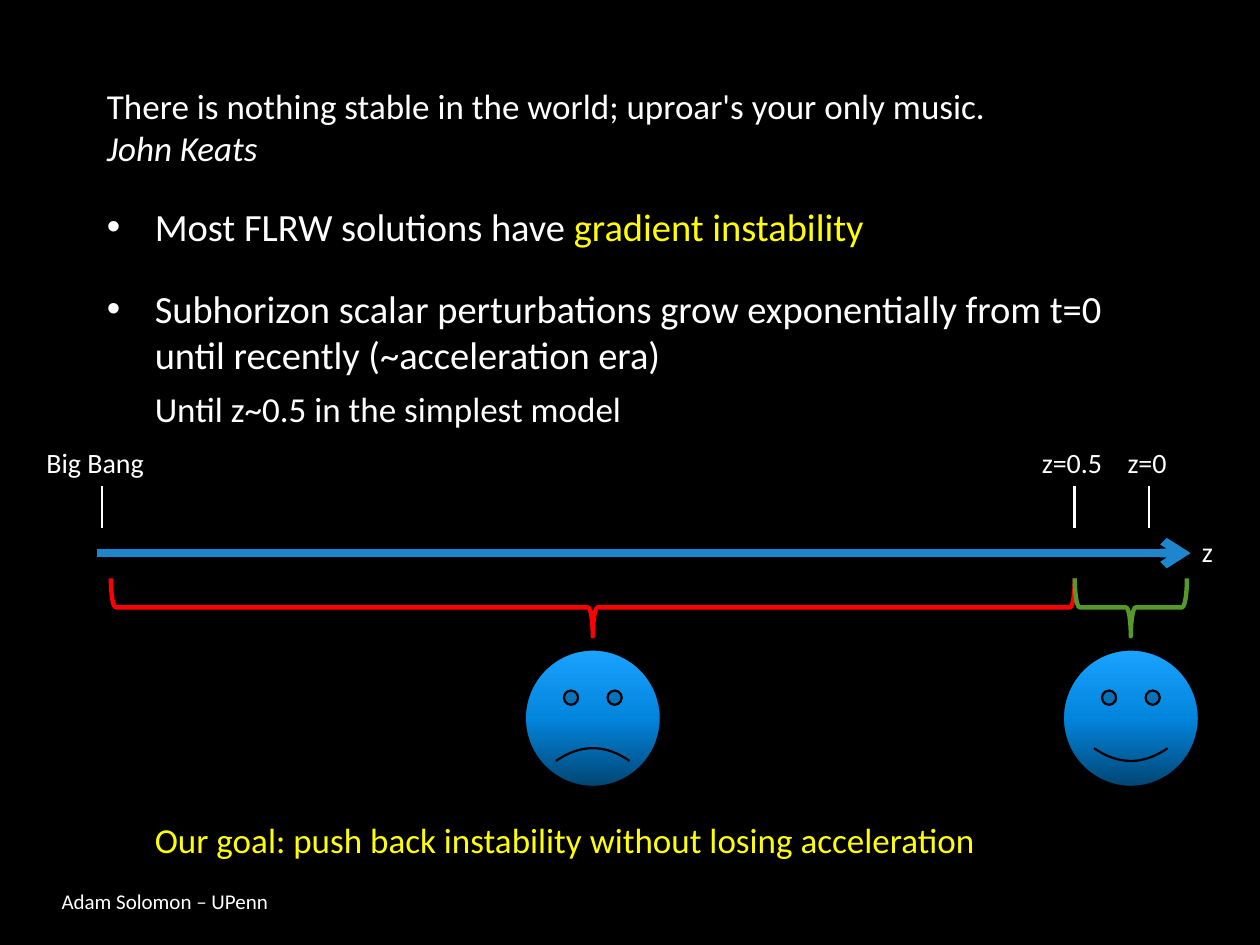
from copy import deepcopy
from dataclasses import dataclass

from lxml import etree
from pptx import Presentation
from pptx import util as u
from pptx.dml.color import RGBColor
from pptx.enum import shapes, text
from pptx.oxml import ns

BLACK = RGBColor(0, 0, 0)
WHITE = RGBColor(0xFF, 0xFF, 0xFF)
YELLOW = RGBColor(0xFF, 0xFF, 0)
RED = RGBColor(0xFF, 0, 0)
GREEN = RGBColor(0x55, 0x99, 0x2B)
BLUE = RGBColor(0x1D, 0x86, 0xCD)
FACE_STOPS = (
    (0, RGBColor(0x01, 0x45, 0x73)),
    (0.5, RGBColor(0x02, 0x85, 0xDD)),
    (1, RGBColor(0x1A, 0xA3, 0xFF)),
)
TICK_TOP, TICK_BOTTOM, AXIS_Y = 3.86, 4.19, 4.39


@dataclass(frozen=True)
class Span:
    words: str
    size: float = 20
    color: RGBColor = WHITE
    italic: bool = False
    breaks_line: bool = False


@dataclass(frozen=True)
class Para:
    spans: tuple[Span, ...]
    before: float = 0
    margin: float = 0
    bullet: bool = False


@dataclass(frozen=True)
class Label:
    words: str
    left: float
    top: float
    width: float


@dataclass(frozen=True)
class Era:
    start: float
    end: float
    color: RGBColor
    smile: float


QUOTE_AND_POINTS = (
    Para((
        Span("There is nothing stable in the world; uproar's your only music."),
        Span("John Keats", italic=True, breaks_line=True),
    )),
    Para((
        Span("Most FLRW solutions have ", 22),
        Span("gradient instability", 22, YELLOW),
    ), 20, 0.38, True),
    Para((
        Span("Subhorizon scalar perturbations grow exponentially "
             "from t=0 until recently (~acceleration era)", 22),
    ), 20, 0.38, True),
    Para((Span("Until z~0.5 in the simplest model"),), 6, 0.38),
)
GOAL = Para((
    Span("Our goal: push back instability without losing acceleration", color=YELLOW),
), margin=0.38)
FOOTER = Para((Span("Adam Solomon – UPenn", 12),))
LABELS = (
    Label("Big Bang", 0.27, 3.49, 1.33),
    Label("z=0.5", 8.17, 3.49, 0.86),
    Label("z=0", 8.85, 3.49, 0.59),
    Label("z", 9.44, 4.19, 0.42),
)
TICKS = (0.81, 8.53, 9.12)
ERAS = (
    Era(0.88, 8.53, RED, -0.047),
    Era(8.53, 9.42, GREEN, 0.047),
)


def add_text(page, left: float, top: float, width: float, height: float,
             paras: tuple[Para, ...], anchor=text.MSO_ANCHOR.TOP) -> None:
    box = page.shapes.add_textbox(*map(u.Inches, (left, top, width, height)))
    frame = box.text_frame
    frame.word_wrap = True
    frame.vertical_anchor = anchor
    for index, item in enumerate(paras):
        para = frame.add_paragraph() if index else frame.paragraphs[0]
        properties = para._p.get_or_add_pPr()
        properties.set("marL", str(u.Inches(item.margin)))
        if item.bullet:
            properties.set("indent", str(-u.Inches(item.margin)))
            font = etree.SubElement(properties, ns.qn("a:buFont"))
            font.set("typeface", "Arial")
            etree.SubElement(properties, ns.qn("a:buChar")).set("char", "•")
        para.space_before = u.Pt(item.before)
        for span in item.spans:
            if span.breaks_line:
                para.add_line_break()
            run = para.add_run()
            run.text = span.words
            formats = {"name": "Calibri", "size": u.Pt(span.size), "italic": span.italic}
            for name, value in formats.items():
                setattr(run.font, name, value)
            run.font.color.rgb = span.color


def add_line(page, start: tuple[float, float], end: tuple[float, float],
             color: RGBColor, weight: float, arrow: bool = False) -> None:
    line = page.shapes.add_connector(
        shapes.MSO_CONNECTOR.STRAIGHT, *map(u.Inches, (*start, *end)))
    line.line.color.rgb = color
    line.line.width = u.Pt(weight)
    if arrow:
        outline = line.line._get_or_add_ln()
        etree.SubElement(outline, ns.qn("a:tailEnd")).set("type", "arrow")
    etree.SubElement(line._element.spPr, ns.qn("a:effectLst"))


def add_outlined(page, kind, center_x: float, center_y: float, width: float,
                 height: float, color: RGBColor, weight: float):
    left, top = center_x - width / 2, center_y - height / 2
    shape = page.shapes.add_shape(kind, *map(u.Inches, (left, top, width, height)))
    shape.shadow.inherit = False
    shape.line.color.rgb = color
    shape.line.width = u.Pt(weight)
    return shape


def add_era(page, era: Era) -> None:
    middle = (era.start + era.end) / 2
    brace = add_outlined(page, shapes.MSO_SHAPE.LEFT_BRACE, middle, 4.82,
                         0.46, era.end - era.start, era.color, 2.5)
    brace.rotation = 270
    brace.fill.background()

    face = add_outlined(page, shapes.MSO_SHAPE.SMILEY_FACE, middle, 5.7,
                        1.08, 1.09, BLACK, 1.25)
    face.adjustments[0] = era.smile
    face.fill.gradient()
    face.fill.gradient_angle = 90
    stop_list = face._element.spPr.find(ns.qn("a:gradFill")).find(ns.qn("a:gsLst"))
    stop_list.append(deepcopy(stop_list[0]))
    for stop, (position, color) in zip(face.fill.gradient_stops, FACE_STOPS):
        stop.position = position
        stop.color.rgb = color


def main() -> None:
    deck = Presentation()
    deck.slide_width, deck.slide_height = u.Inches(10), u.Inches(7.5)
    page = deck.slides.add_slide(deck.slide_layouts[6])
    page.background.fill.solid()
    page.background.fill.fore_color.rgb = BLACK

    add_text(page, 0.75, 0.62, 8.68, 2.85, QUOTE_AND_POINTS)
    add_text(page, 0.75, 6.45, 8.68, 0.44, (GOAL,))
    add_text(page, 0.39, 6.95, 3.17, 0.4, (FOOTER,), text.MSO_ANCHOR.MIDDLE)

    add_line(page, (0.77, AXIS_Y), (9.45, AXIS_Y), BLUE, 5, arrow=True)
    for era in ERAS:
        add_era(page, era)
    for x in TICKS:
        add_line(page, (x, TICK_TOP), (x, TICK_BOTTOM), WHITE, 1.5)
    for label in LABELS:
        add_text(page, label.left, label.top, label.width, 0.37,
                 (Para((Span(label.words, 16),)),))

    deck.save("out.pptx")


if __name__ == "__main__":
    main()
